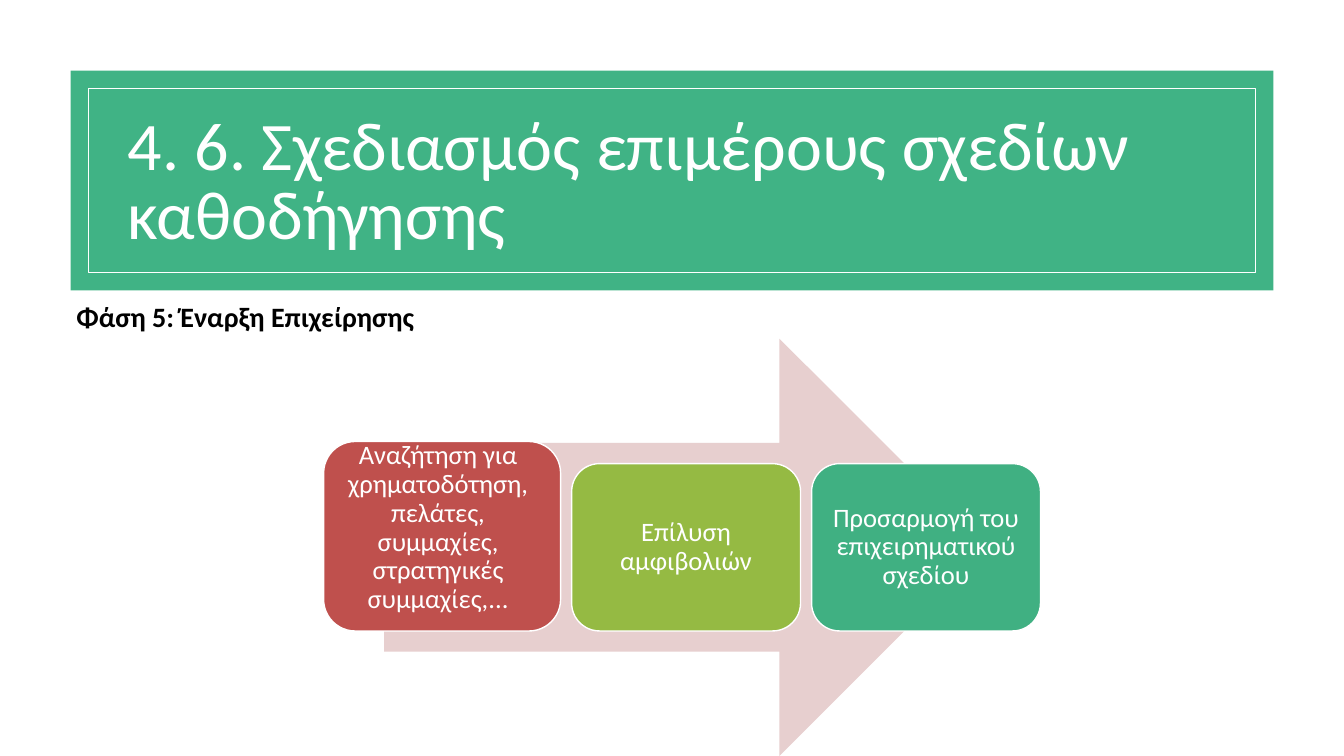
from pptx import Presentation
from pptx.dml.color import RGBColor
from pptx.enum.shapes import MSO_SHAPE as Preset
from pptx.enum.text import MSO_ANCHOR as Anchor, PP_ALIGN as Align
from pptx.util import Emu, Pt

PX = 9144  # 100 px to the inch
FONT = "Calibri"
WHITE = "FFFFFF"


def px(*lengths):
    return [Emu(length * PX) for length in lengths]


def color(hex_value):
    return RGBColor.from_string(hex_value)


def add_preset(slide, preset, box, fill=None, line=None, line_width=1.0):
    shape = slide.shapes.add_shape(preset, *px(*box))
    shape.shadow.inherit = False
    if fill:
        shape.fill.solid()
        shape.fill.fore_color.rgb = color(fill)
    else:
        shape.fill.background()
    if line:
        shape.line.color.rgb = color(line)
        shape.line.width = Pt(line_width)
    else:
        shape.line.fill.background()
    return shape


def write_text(shape, text, size, hex_value, insets=(10, 5, 10, 5), bold=False,
               anchor=Anchor.MIDDLE, align=Align.LEFT, spacing=1.0):
    frame = shape.text_frame
    frame.word_wrap = True
    frame.vertical_anchor = anchor
    (frame.margin_left, frame.margin_top,
     frame.margin_right, frame.margin_bottom) = px(*insets)
    paragraph = frame.paragraphs[0]
    paragraph.alignment = align
    paragraph.line_spacing = spacing
    run = paragraph.add_run()
    run.text = text
    run.font.name = FONT
    run.font.size = Pt(size)
    run.font.bold = bold
    run.font.color.rgb = color(hex_value)


def add_text(slide, box, text, size, hex_value, **style):
    write_text(slide.shapes.add_textbox(*px(*box)), text, size, hex_value, **style)


def add_step(slide, box, text, fill, insets=(0, 0, 0, 0)):
    step = add_preset(slide, Preset.ROUNDED_RECTANGLE, box, fill, WHITE)
    write_text(step, text, 19, WHITE, insets, align=Align.CENTER, spacing=0.9)


def main():
    presentation = Presentation()
    presentation.slide_width, presentation.slide_height = px(1333, 750)
    slide = presentation.slides.add_slide(presentation.slide_layouts[6])

    # Title banner with its inner frame
    add_preset(slide, Preset.RECTANGLE, (70, 70, 1193, 218), "40B385")
    add_preset(slide, Preset.RECTANGLE, (88, 88, 1157, 182), line=WHITE, line_width=0.75)
    add_text(slide, (117, 116, 1054, 134),
             "4. 6. Σχεδιασμός επιμέρους σχεδίων καθοδήγησης", 48.6, WHITE, spacing=0.85)

    # Phase heading
    add_text(slide, (66, 292, 1202, 77), "Φάση 5: Έναρξη Επιχείρησης", 20, "000000",
             bold=True, anchor=Anchor.TOP)

    # Process arrow and its steps; the first step's text sits up and to the left
    add_preset(slide, Preset.RIGHT_ARROW, (381, 336, 599, 414), "E7CFCF")
    add_step(slide, (321, 438, 235, 188),
             "Αναζήτηση για χρηματοδότηση, πελάτες, συμμαχίες, στρατηγικές συμμαχίες,...",
             "BF504D", insets=(0, 0, 8, 16))
    later_steps = [("Επίλυση αμφιβολιών", "95BA43"),
                   ("Προσαρμογή του επιχειρηματικού σχεδίου", "40B082")]
    for index, (text, fill) in enumerate(later_steps):
        add_step(slide, (567 + index * 238, 460, 227, 166), text, fill)

    presentation.save("out.pptx")


if __name__ == "__main__":
    main()
